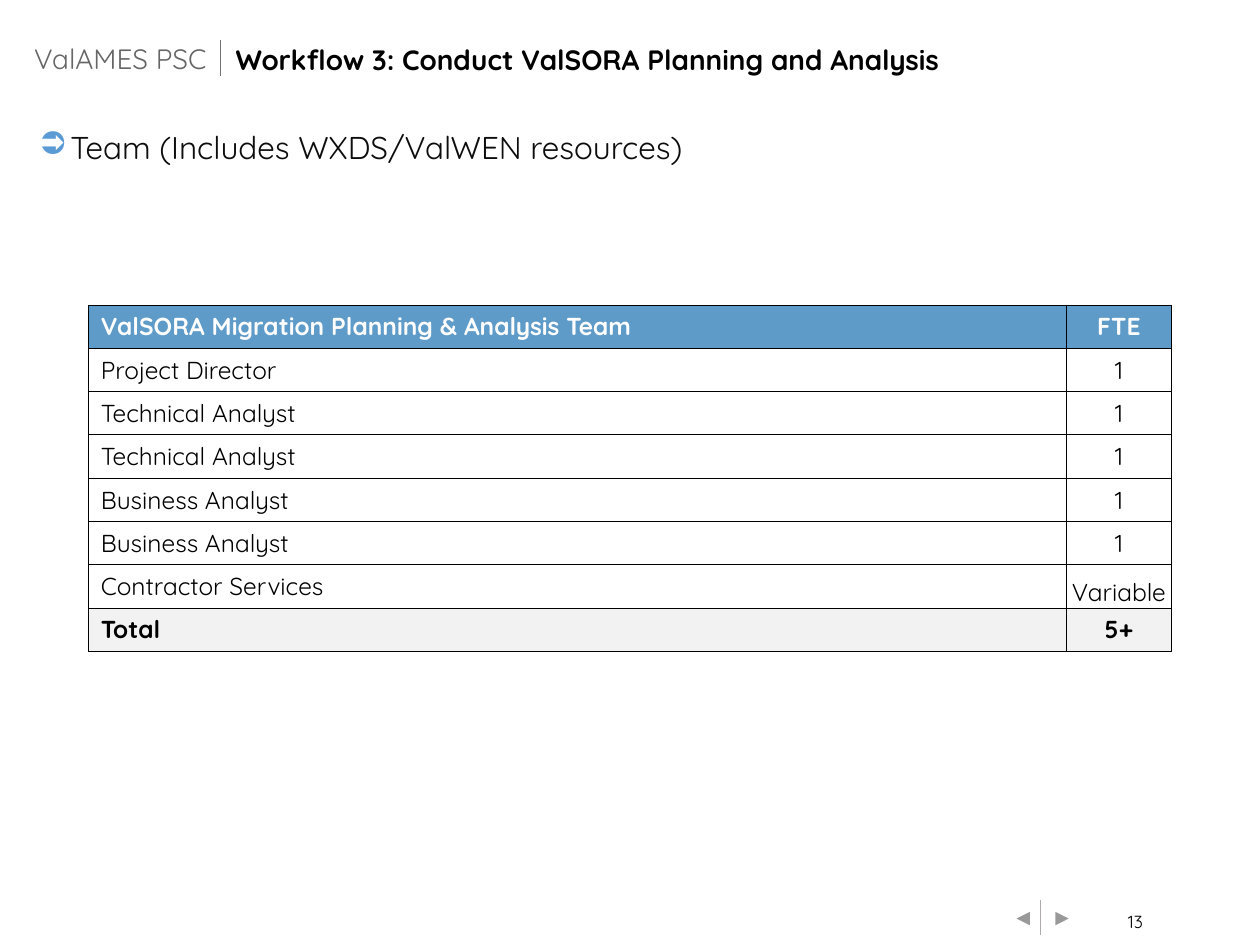
"""Build the planning and analysis team slide."""
from dataclasses import dataclass

from lxml import etree
from pptx import Presentation
from pptx import util as u
from pptx.dml.color import RGBColor
from pptx.enum import shapes, text
from pptx.oxml import ns


@dataclass(frozen=True)
class Theme:
    font: str = "Quicksand"
    black: str = "000000"
    white: str = "FFFFFF"
    body: str = "0D0D0D"
    section: str = "666666"
    accent: str = "5B9BD5"
    header: str = "5F9BC8"
    total: str = "F2F2F2"
    title_rule: str = "767171"
    footer_rule: str = "AFABAB"
    body_size: int = 18
    title_size: int = 16
    table_size: int = 14
    number_size: int = 10


THEME = Theme()
TEAM = [
    ("ValSORA Migration Planning & Analysis Team", "FTE"),
    ("Project Director", "1"),
    ("Technical Analyst", "1"),
    ("Technical Analyst", "1"),
    ("Business Analyst", "1"),
    ("Business Analyst", "1"),
    ("Contractor Services", "Variable"),
    ("Total", "5+"),
]


def color(value):
    return RGBColor.from_string(value)


def place(shape, left, top, width, height):
    shape.left, shape.top = u.Inches(left), u.Inches(top)
    shape.width, shape.height = u.Inches(width), u.Inches(height)


def write(paragraph, words, size, ink, bold=False, align=text.PP_ALIGN.LEFT):
    paragraph.alignment = align
    run = paragraph.add_run()
    run.text = words
    run.font.name = THEME.font
    run.font.size = u.Pt(size)
    run.font.bold = bold
    run.font.color.rgb = color(ink)


def set_frame(frame, sides, ends, anchor=text.MSO_ANCHOR.TOP, wrap=True):
    frame.margin_left = frame.margin_right = u.Inches(sides)
    frame.margin_top = frame.margin_bottom = u.Inches(ends)
    frame.vertical_anchor = anchor
    frame.word_wrap = wrap
    frame.auto_size = text.MSO_AUTO_SIZE.NONE


def set_spacing(paragraph):
    paragraph.line_spacing = 0.9
    paragraph.space_before = u.Pt(10)


def add_title(slide, words):
    title = slide.shapes.title
    place(title, 1.87, 0.3, 7.2, 0.37)
    set_frame(title.text_frame, 0, 0.05, text.MSO_ANCHOR.MIDDLE)
    paragraph = title.text_frame.paragraphs[0]
    set_spacing(paragraph)
    write(paragraph, words, THEME.title_size, THEME.black, bold=True)


def add_text_box(slide, box):
    return slide.shapes.add_textbox(*map(u.Inches, box)).text_frame


def add_section(slide, words):
    frame = add_text_box(slide, (0.27, 0.28, 2.39, 0.37))
    set_frame(frame, 0, 0.05, text.MSO_ANCHOR.MIDDLE)
    write(frame.paragraphs[0], words, THEME.title_size, THEME.section)


def add_page_number(slide, words):
    frame = add_text_box(slide, (8.83, 7.19, 0.32, 0.24))
    set_frame(frame, 0.08, 0.04, wrap=False)
    write(frame.paragraphs[0], words, THEME.number_size, THEME.black,
          align=text.PP_ALIGN.RIGHT)


def add_bullet(slide, words):
    frame = add_text_box(slide, (0.21, 1, 9.58, 0.47))
    set_frame(frame, 0.1, 0.05)
    paragraph = frame.paragraphs[0]
    set_spacing(paragraph)
    write(paragraph, words, THEME.body_size, THEME.body)
    properties = paragraph._p.get_or_add_pPr()
    properties.set("marL", str(u.Inches(0.25)))
    properties.set("indent", str(-u.Inches(0.25)))
    bullet_color = etree.SubElement(properties, ns.qn("a:buClr"))
    etree.SubElement(bullet_color, ns.qn("a:srgbClr"), val=THEME.accent)
    etree.SubElement(properties, ns.qn("a:buChar"), char="➲")


def add_rule(slide, x, top, bottom, ink):
    rule = slide.shapes.add_connector(
        shapes.MSO_CONNECTOR.STRAIGHT, *map(u.Inches, (x, top, x, bottom)))
    rule.line.color.rgb = color(ink)
    rule.line.width = u.Pt(0.5)
    etree.SubElement(rule._element.spPr, ns.qn("a:effectLst"))


def add_arrow_button(slide, left, rotation):
    button = slide.shapes.add_shape(
        shapes.MSO_SHAPE.ACTION_BUTTON_FORWARD_OR_NEXT,
        *map(u.Inches, (left, 7.2, 0.14, 0.18)))
    button.rotation = rotation
    button.shadow.inherit = False
    button.fill.solid()
    button.fill.fore_color.rgb = color(THEME.white)
    button.line.fill.background()


def set_borders(cell):
    properties = cell._tc.get_or_add_tcPr()
    for index, side in enumerate(("lnL", "lnR", "lnT", "lnB")):
        border = etree.Element(ns.qn(f"a:{side}"), w=str(u.Pt(0.5)))
        fill = etree.SubElement(border, ns.qn("a:solidFill"))
        etree.SubElement(fill, ns.qn("a:srgbClr"), val=THEME.black)
        properties.insert(index, border)


def fill_cell(cell, words, fill, ink, bold, align):
    write(cell.text_frame.paragraphs[0], words, THEME.table_size, ink, bold, align)
    cell.vertical_anchor = text.MSO_ANCHOR.BOTTOM
    cell.fill.solid()
    cell.fill.fore_color.rgb = color(fill)
    set_borders(cell)


def add_team_table(slide):
    row_height = 0.34
    frame = slide.shapes.add_table(
        len(TEAM), 2,
        *map(u.Inches, (0.7, 2.42, 8.6, row_height * len(TEAM))))
    table = frame.table
    for column, width in zip(table.columns, (7.76, 0.84)):
        column.width = u.Inches(width)
    last = len(TEAM) - 1
    fills = {0: THEME.header, last: THEME.total}
    aligns = (text.PP_ALIGN.LEFT, text.PP_ALIGN.CENTER)
    for row, entries in enumerate(TEAM):
        table.rows[row].height = u.Inches(row_height)
        for column, words in enumerate(entries):
            fill_cell(table.cell(row, column), words,
                      fills.get(row, THEME.white),
                      THEME.black if row else THEME.white,
                      row in fills, aligns[column])
    table.cell(0, 1).vertical_anchor = text.MSO_ANCHOR.MIDDLE
    variable = table.cell(last - 1, 1)
    variable.margin_left = variable.margin_right = 0
    variable.margin_top = variable.margin_bottom = 0


def main():
    presentation = Presentation()
    presentation.slide_width = u.Inches(10)
    presentation.slide_height = u.Inches(7.5)
    slide = presentation.slides.add_slide(presentation.slide_layouts[5])
    add_page_number(slide, "13")
    add_arrow_button(slide, 8.36, 0)
    add_arrow_button(slide, 8.05, 180)
    add_rule(slide, 8.26, 7.14, 7.42, THEME.footer_rule)
    add_section(slide, "ValAMES PSC")
    add_rule(slide, 1.75, 0.32, 0.6, THEME.title_rule)
    add_title(slide, "Workflow 3: Conduct ValSORA Planning and Analysis")
    add_bullet(slide, "Team (Includes WXDS/ValWEN resources)")
    add_team_table(slide)
    presentation.save("out.pptx")


if __name__ == "__main__":
    main()
